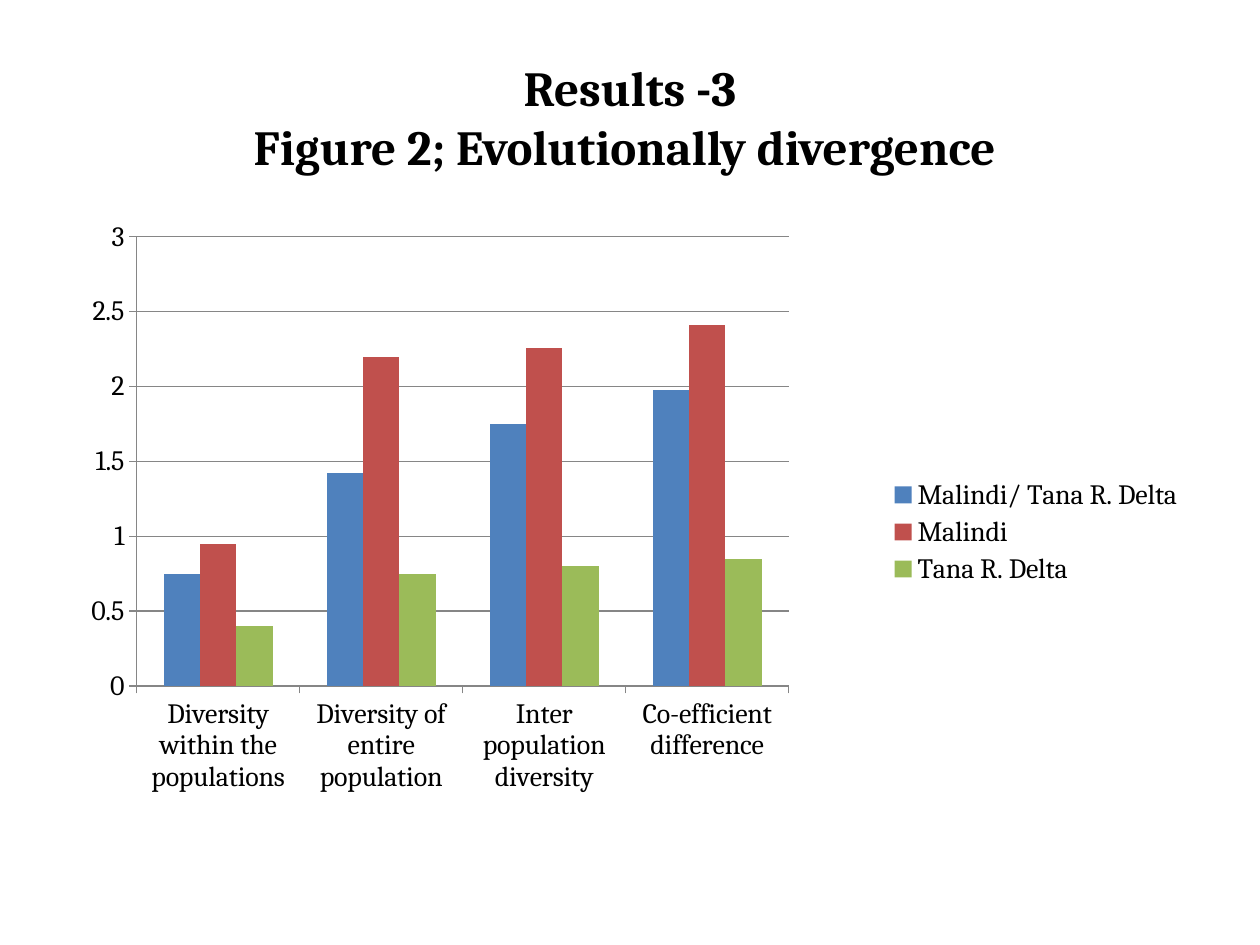
from dataclasses import dataclass

from lxml.etree import SubElement
from pptx import Presentation
from pptx.chart.data import CategoryChartData
from pptx.dml.color import RGBColor
from pptx.enum.chart import XL_CHART_TYPE, XL_LEGEND_POSITION, XL_TICK_MARK
from pptx.enum.text import MSO_ANCHOR, PP_ALIGN
from pptx.oxml.ns import qn
from pptx.util import Emu, Pt

PX = 914400 // 126


@dataclass(frozen=True)
class Theme:
    font: str = "Cambria"
    title_size: int = 28
    chart_size: int = 16
    ink: str = "000000"
    rule: str = "868686"
    populations: tuple = ("4F81BD", "C0504D", "9BBB59")


THEME = Theme()
TITLE_BOX = (63, 38, 1134, 157)
DIVERGENCE_BOX = (63, 220, 1134, 624)
PLOT_BOX = (74, 17, 652, 449)

MEASURES = (
    "Diversity within the populations",
    "Diversity of entire population",
    "Inter population diversity",
    "Co-efficient difference",
)
DIVERGENCE = {
    "Malindi/ Tana R. Delta": (0.75, 1.42, 1.75, 1.98),
    "Malindi": (0.95, 2.2, 2.26, 2.41),
    "Tana R. Delta": (0.4, 0.75, 0.8, 0.85),
}


def scaled(box):
    return [Emu(length * PX) for length in box]


def assign(target, values):
    for name, value in values.items():
        setattr(target, name, value)


def style_font(font, size, bold=False):
    assign(font, {"name": THEME.font, "size": Pt(size), "bold": bold})
    font.color.rgb = RGBColor.from_string(THEME.ink)


def style_rule(line):
    line.color.rgb = RGBColor.from_string(THEME.rule)
    line.width = Pt(0.75)


def place_plot(chart, box, frame):
    plot_area = chart._chartSpace.chart.plotArea
    layout = plot_area.find(qn("c:layout"))
    if layout is None:
        layout = SubElement(plot_area, qn("c:layout"))
        plot_area.insert(0, layout)
    manual = SubElement(layout, qn("c:manualLayout"))
    left, top, width, height = box
    settings = {
        "layoutTarget": "inner",
        "xMode": "edge",
        "yMode": "edge",
        "x": round(left / frame[2], 3),
        "y": round(top / frame[3], 3),
        "w": round(width / frame[2], 3),
        "h": round(height / frame[3], 3),
    }
    for tag, value in settings.items():
        SubElement(manual, qn(f"c:{tag}")).set("val", str(value))


def add_title(slide, box):
    title = slide.shapes.title
    assign(title, dict(zip(("left", "top", "width", "height"), scaled(box))))
    frame = title.text_frame
    assign(frame, {"word_wrap": True, "vertical_anchor": MSO_ANCHOR.MIDDLE})
    heading = frame.paragraphs[0]
    heading.text = "Results -3\vFigure 2; Evolutionally divergence "
    heading.alignment = PP_ALIGN.CENTER
    for run in heading.runs:
        style_font(run.font, THEME.title_size, bold=True)


def add_divergence_chart(slide, box):
    divergence = CategoryChartData()
    divergence.categories = MEASURES
    for population, values in DIVERGENCE.items():
        divergence.add_series(population, values)
    chart = slide.shapes.add_chart(
        XL_CHART_TYPE.COLUMN_CLUSTERED, *scaled(box), divergence
    ).chart
    assign(chart, {"has_title": False, "has_legend": True})
    style_font(chart.font, THEME.chart_size)
    assign(
        chart.legend,
        {"position": XL_LEGEND_POSITION.RIGHT, "include_in_layout": False},
    )

    columns = chart.plots[0]
    assign(columns, {"gap_width": 150, "overlap": 0, "vary_by_categories": False})
    for population, color in zip(columns.series, THEME.populations):
        population.invert_if_negative = False
        population.format.fill.solid()
        population.format.fill.fore_color.rgb = RGBColor.from_string(color)

    for axis in (chart.category_axis, chart.value_axis):
        axis.major_tick_mark = XL_TICK_MARK.OUTSIDE
        axis.minor_tick_mark = XL_TICK_MARK.NONE
        style_rule(axis.format.line)
    assign(
        chart.value_axis,
        {
            "minimum_scale": 0,
            "maximum_scale": 3,
            "major_unit": 0.5,
            "has_major_gridlines": True,
        },
    )
    style_rule(chart.value_axis.major_gridlines.format.line)
    place_plot(chart, PLOT_BOX, box)


def main():
    deck = Presentation()
    assign(deck, {"slide_width": Emu(1260 * PX), "slide_height": Emu(945 * PX)})
    slide = deck.slides.add_slide(deck.slide_layouts[5])
    add_title(slide, TITLE_BOX)
    add_divergence_chart(slide, DIVERGENCE_BOX)
    deck.save("out.pptx")


if __name__ == "__main__":
    main()
